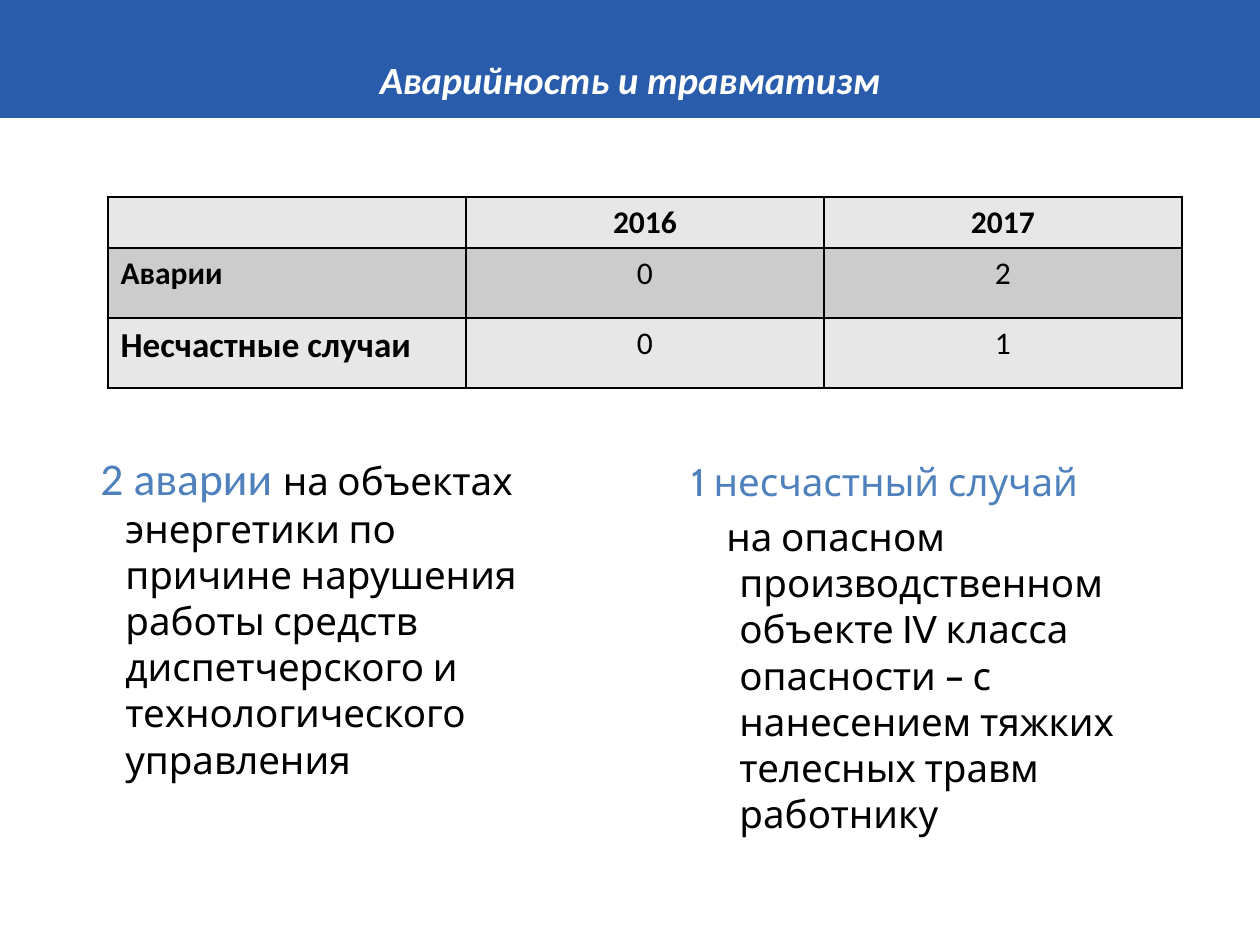
import pptx
import pptx.util
import pptx.dml.color
import pptx.enum.text
import pptx.oxml
import pptx.oxml.ns

PX = 914400 // 126
ALIGN = pptx.enum.text.PP_ALIGN
COLORS = {
    "band": "2A5CAC", "white": "FFFFFF", "black": "000000",
    "accent": "4F81BD", "light": "E7E7E7", "dark": "CCCCCC",
}


def rgb(name):
    return pptx.dml.color.RGBColor.from_string(COLORS[name])


def add_text(p, text, size=18, font="Calibri", color="black", bold=False,
             italic=False, align=ALIGN.LEFT):
    p.alignment = align
    r = p.add_run()
    r.text = text
    r.font.size = pptx.util.Pt(size)
    r.font.name = font
    r.font.bold = bold
    r.font.italic = italic
    r.font.color.rgb = rgb(color)


prs = pptx.Presentation()
prs.slide_width = pptx.util.Inches(10)
prs.slide_height = pptx.util.Inches(7.5)
s = prs.slides.add_slide(prs.slide_layouts[5])

# Title band
title = s.shapes.title
title.left, title.top, title.width, title.height = 0, 0, prs.slide_width, 118 * PX
title.fill.solid()
title.fill.fore_color.rgb = rgb("band")
tf = title.text_frame
tf.auto_size = pptx.enum.text.MSO_AUTO_SIZE.NONE
tf.vertical_anchor = pptx.enum.text.MSO_ANCHOR.BOTTOM
tf.margin_bottom = 16 * PX
add_text(tf.paragraphs[0], "Аварийность и травматизм", size=22, color="white",
         bold=True, italic=True, align=ALIGN.CENTER)

# Table of accidents by year
rows = [
    ("", "2016", "2017"),
    ("Аварии", "0", "2"),
    ("Несчастные случаи", "0", "1"),
]
row_heights = [51, 70, 70]
table = s.shapes.add_table(3, 3, 108 * PX, 197 * PX, 3 * 358 * PX,
                           sum(row_heights) * PX).table
for column in table.columns:
    column.width = 358 * PX
for i, row in enumerate(rows):
    table.rows[i].height = row_heights[i] * PX
    for j, text in enumerate(row):
        cell = table.cell(i, j)
        tcPr = cell._tc.get_or_add_tcPr()
        for side in ("lnL", "lnR", "lnT", "lnB"):
            tcPr.append(pptx.oxml.parse_xml(
                f'<a:{side} {pptx.oxml.ns.nsdecls("a")} w="12700"><a:solidFill>'
                f'<a:srgbClr val="{COLORS["black"]}"/></a:solidFill></a:{side}>'))
        cell.fill.solid()
        cell.fill.fore_color.rgb = rgb("dark" if i == 1 else "light")
        if text:
            add_text(cell.text_frame.paragraphs[0], text,
                     size=20 if (i, j) == (2, 0) else 18,
                     bold=i == 0 or j == 0,
                     align=ALIGN.CENTER if j else ALIGN.LEFT)

# Notes below the table: box, then paragraphs of (margin, indent, runs)
body = dict(size=22, font="Cabin")
notes = [
    ((88, 444, 493, 370), [
        (25, -25, [
            ("2 аварии ", dict(size=26, color="accent")),
            ("на объектах энергетики по причине нарушения работы средств "
             "диспетчерского и технологического управления", body),
        ]),
    ]),
    ((679, 452, 522, 462), [
        (48, -48, [("1 несчастный случай", dict(body, color="accent"))]),
        (48, -13, [
            ("на опасном производственном объекте IV класса опасности – "
             "с нанесением тяжких телесных травм работнику", body),
        ]),
    ]),
]
for box, paragraphs in notes:
    tf = s.shapes.add_textbox(*(v * PX for v in box)).text_frame
    tf.word_wrap = True
    for k, (margin, indent, runs) in enumerate(paragraphs):
        p = tf.add_paragraph() if k else tf.paragraphs[0]
        if k:
            p.space_before = pptx.util.Pt(5)
        pPr = p._p.get_or_add_pPr()
        pPr.set("marL", str(margin * PX))
        pPr.set("indent", str(indent * PX))
        for text, style in runs:
            add_text(p, text, **style)

prs.save("out.pptx")
